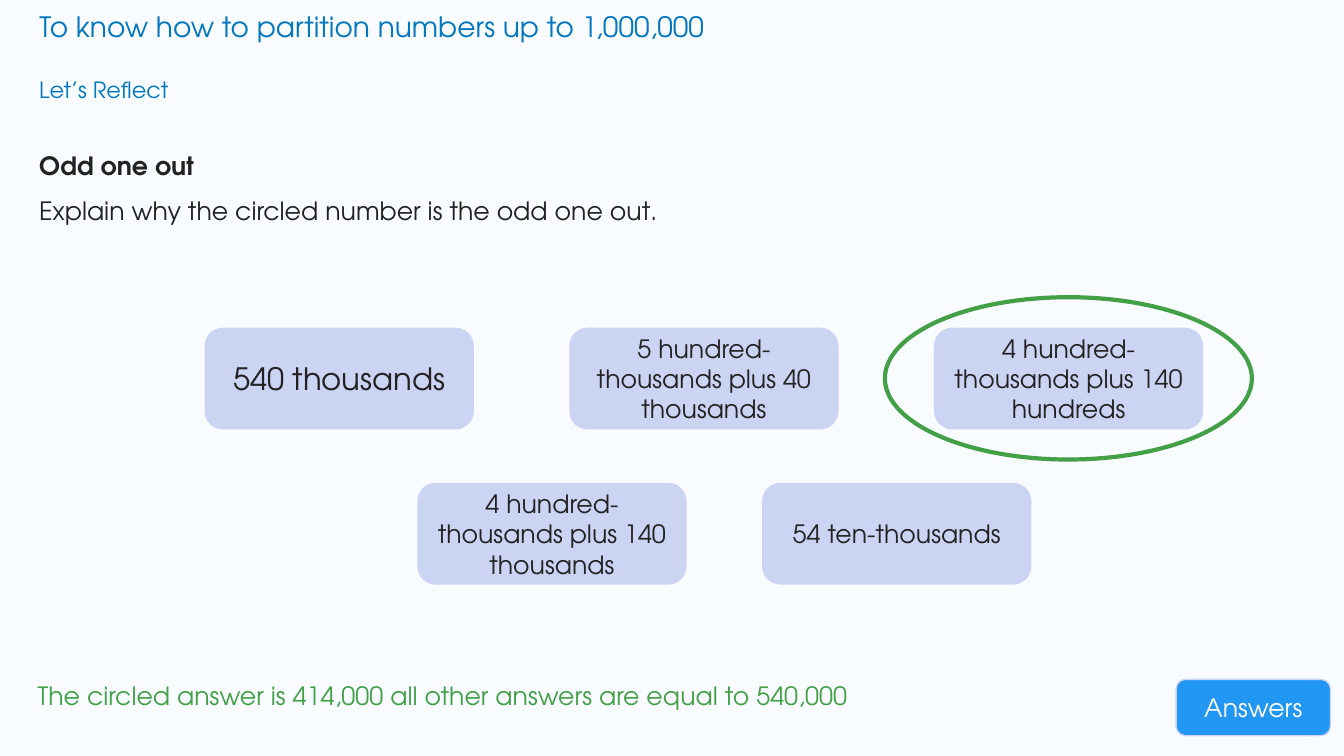
from dataclasses import dataclass

from pptx import Presentation
from pptx.dml.color import RGBColor
from pptx.enum import shapes, text
from pptx.util import Cm, Pt

FONT = "TeX Gyre Adventor"
HUES = {
    "page": "F8FBFF", "title": "0277BD", "ink": "222222", "card": "CCD4F4",
    "green": "43A047", "button": "2196F3", "white": "FFFFFF",
}
KIND = shapes.MSO_SHAPE
ALIGN = text.PP_ALIGN
ANCHOR = text.MSO_ANCHOR


@dataclass
class Line:
    words: str
    size: int = 18
    hue: str = "ink"
    bold: bool = False
    space: float = 1.0


@dataclass
class Box:
    left: float
    top: float
    width: float
    height: float


@dataclass
class Form:
    """Look of a drawn shape: a fill of None leaves it hollow."""
    kind: KIND
    fill: str | None
    edge: str
    weight: float


CARD = Form(KIND.ROUNDED_RECTANGLE, "card", "card", 3)
BUTTON = Form(KIND.ROUNDED_RECTANGLE, "button", "card", 1)
RING = Form(KIND.OVAL, None, "green", 3)

TITLE = Line("To know how to partition numbers up to 1,000,000", 20, "title")
NOTES = [
    (Box(0.74, 1.8, 7.54, 1.17), [Line("Let’s Reflect", 16, "title")]),
    (Box(0.74, 3.28, 32.61, 2.77), [
        Line("Odd one out", bold=True, space=1.5),
        Line("Explain why the circled number is the odd one out.", space=1.5),
    ]),
    (Box(0.7, 16.64, 28.37, 1.02), [
        Line("The circled answer is 414,000 all other answers are equal to 540,000",
             hue="green", space=1.5),
    ]),
]
# Each row of cards: first left edge, top, step, labels
ROWS = [
    (5.21, 8.31, 9.19, [
        Line("540 thousands", 22),
        Line("5 hundred- thousands plus 40 thousands"),
        Line("4 hundred- thousands plus 140 hundreds"),
    ]),
    (10.57, 12.22, 8.69, [
        Line("4 hundred- thousands plus 140 thousands"),
        Line("54 ten-thousands"),
    ]),
]


def rgb(hue: str) -> RGBColor:
    return RGBColor.from_string(HUES[hue])


def area(box: Box) -> tuple:
    return tuple(Cm(n) for n in (box.left, box.top, box.width, box.height))


def write(frame, lines: list[Line], align=ALIGN.LEFT, anchor=ANCHOR.TOP) -> None:
    look = {
        "word_wrap": True, "auto_size": text.MSO_AUTO_SIZE.NONE,
        "vertical_anchor": anchor,
        "margin_left": Cm(0.25), "margin_right": Cm(0.25),
        "margin_top": Cm(0.13), "margin_bottom": Cm(0.13),
    }
    for name, value in look.items():
        setattr(frame, name, value)
    for i, line in enumerate(lines):
        para = frame.add_paragraph() if i else frame.paragraphs[0]
        para.alignment = align
        para.line_spacing = line.space
        run = para.add_run()
        run.text = line.words
        for name, value in {"name": FONT, "size": Pt(line.size), "bold": line.bold}.items():
            setattr(run.font, name, value)
        run.font.color.rgb = rgb(line.hue)


def draw(slide, box: Box, form: Form, label: Line | None = None) -> None:
    shape = slide.shapes.add_shape(form.kind, *area(box))
    shape.shadow.inherit = False
    if form.fill:
        shape.fill.solid()
        shape.fill.fore_color.rgb = rgb(form.fill)
    else:
        shape.fill.background()
    shape.line.color.rgb = rgb(form.edge)
    shape.line.width = Pt(form.weight)
    if label:
        write(shape.text_frame, [label], ALIGN.CENTER, ANCHOR.MIDDLE)


def main() -> None:
    deck = Presentation()
    deck.slide_width, deck.slide_height = Cm(33.87), Cm(19.05)
    slide = deck.slides.add_slide(deck.slide_layouts[5])
    slide.background.fill.solid()
    slide.background.fill.fore_color.rgb = rgb("page")

    title = slide.shapes.title
    title.left, title.top, title.width, title.height = area(Box(0.74, 0.1, 31.34, 1.12))
    write(title.text_frame, [TITLE])

    for box, lines in NOTES:
        write(slide.shapes.add_textbox(*area(box)).text_frame, lines)

    for left, top, step, labels in ROWS:
        for i, label in enumerate(labels):
            draw(slide, Box(left + i * step, top, 6.68, 2.46), CARD, label)

    draw(slide, Box(22.3, 7.49, 9.25, 4.09), RING)
    draw(slide, Box(29.64, 17.12, 3.89, 1.42), BUTTON, Line("Answers", hue="white"))
    deck.save("out.pptx")


if __name__ == "__main__":
    main()
